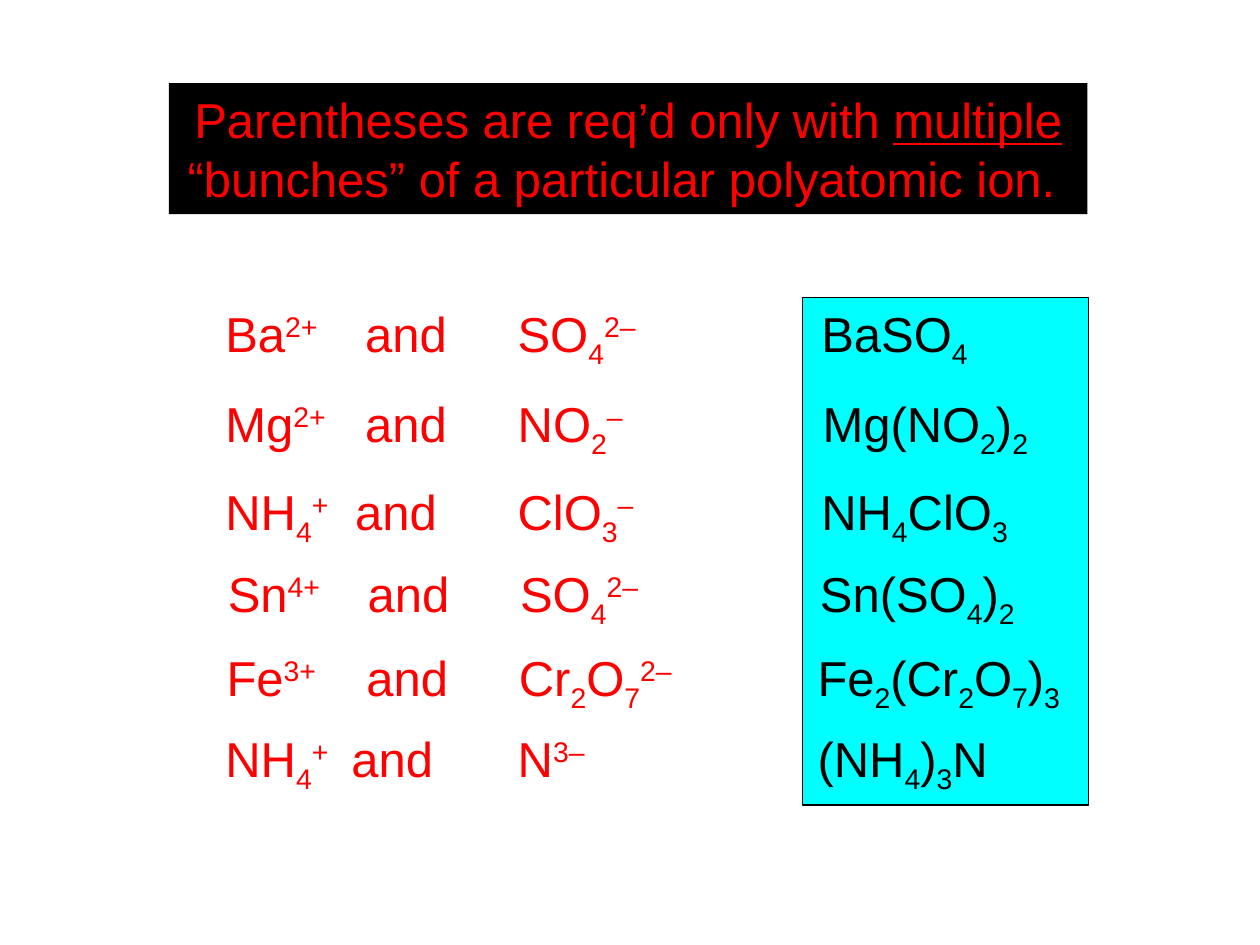
import pptx
import pptx.dml.color
import pptx.enum.shapes
import pptx.enum.text
import pptx.oxml
import pptx.oxml.ns
import pptx.util

RED = pptx.dml.color.RGBColor(0xFF, 0x00, 0x00)
BLACK = pptx.dml.color.RGBColor(0x00, 0x00, 0x00)
CYAN = pptx.dml.color.RGBColor(0x00, 0xFF, 0xFF)

SLIDE_W, SLIDE_H = pptx.util.Inches(10), pptx.util.Inches(7.5)
COL, ROW = SLIDE_W / 100, SLIDE_H / 75
BASELINES = {"_": "-25000", "^": "30000"}
ROW_HEIGHT = 5.7
ANION_TAB = 23.2

TITLE_BOX = (13.4, 6.6, 72.9, 10.4)
PANEL_BOX = (63.7, 23.6, 22.7, 40.3)

# top, (ions left, width), "and" tab, cation, anion, (product left, width), product
ROWS = [
    (23.9, (16.9, 36.4), 11.1, "Ba|^2+", "SO|_4|^2–", (64.2, 14.9), "BaSO|_4"),
    (31.0, (16.9, 35.1), 11.1, "Mg|^2+", "NO|_2|^–", (64.3, 19.9), "Mg(NO|_2|)|_2"),
    (38.0, (16.9, 36.0), 10.3, "NH|_4|^+", "ClO|_3|^–", (64.2, 17.3), "NH|_4|ClO|_3"),
    (44.5, (17.1, 35.3), 11.1, "Sn|^4+", "SO|_4|^2–", (64.1, 19.0), "Sn(SO|_4|)|_2"),
    (51.2, (17.0, 39.4), 11.1, "Fe|^3+", "Cr|_2|O|_7|^2–", (63.9, 23.3),
     "Fe|_2|(Cr|_2|O|_7|)|_3"),
    (57.6, (16.9, 32.1), 10.0, "NH|_4|^+", "N|^3–", (63.9, 17.1), "(NH|_4|)|_3|N"),
]


def emu(box):
    x, y, w, h = box
    return [pptx.util.Emu(round(v)) for v in (x * COL, y * ROW, w * COL, h * ROW)]


def add_run(p, text, color):
    r = p.add_run()
    r.text = text
    r.font.name = "Arial"
    r.font.size = pptx.util.Pt(28)
    r.font.color.rgb = color
    return r


def add_formula(p, formula, color):
    for part in formula.split("|"):
        r = add_run(p, part.lstrip("_^"), color)
        if part[0] in BASELINES:
            r.font._element.set("baseline", BASELINES[part[0]])


def fit_frame(tf):
    tf.word_wrap = False
    tf.auto_size = pptx.enum.text.MSO_AUTO_SIZE.SHAPE_TO_FIT_TEXT
    tf.vertical_anchor = pptx.enum.text.MSO_ANCHOR.MIDDLE


def add_tabs(p, stops):
    tabs = pptx.oxml.parse_xml(f"<a:tabLst {pptx.oxml.ns.nsdecls('a')}/>")
    for stop in stops:
        tab = tabs.makeelement(pptx.oxml.ns.qn("a:tab"),
                               {"pos": str(round(stop * COL)), "algn": "l"})
        tabs.append(tab)
    p._p.get_or_add_pPr().append(tabs)


def add_title(s, box):
    sp = s.shapes.title
    sp.left, sp.top, sp.width, sp.height = emu(box)
    sp.fill.solid()
    sp.fill.fore_color.rgb = BLACK
    tf = sp.text_frame
    fit_frame(tf)
    first, second = tf.paragraphs[0], tf.add_paragraph()
    for p in (first, second):
        p.alignment = pptx.enum.text.PP_ALIGN.CENTER
    add_run(first, "Parentheses are req’d only with ", RED)
    add_run(first, "multiple", RED).font.underline = True
    add_run(second, "“bunches” of a particular polyatomic ion. ", RED)


def add_panel(s, box):
    sp = s.shapes.add_shape(pptx.enum.shapes.MSO_SHAPE.RECTANGLE, *emu(box))
    sp.shadow.inherit = False
    sp.fill.solid()
    sp.fill.fore_color.rgb = CYAN
    sp.line.color.rgb = BLACK
    sp.line.width = pptx.util.Pt(0.75)


def add_line(s, box):
    tf = s.shapes.add_textbox(*emu(box)).text_frame
    fit_frame(tf)
    return tf.paragraphs[0]


def add_ions(s, box, cation, anion, and_tab):
    p = add_line(s, box)
    add_tabs(p, (and_tab, ANION_TAB))
    add_formula(p, cation, RED)
    add_run(p, "\tand\t", RED)
    add_formula(p, anion, RED)


def add_product(s, box, product):
    add_formula(add_line(s, box), product, BLACK)


def main():
    prs = pptx.Presentation()
    prs.slide_width, prs.slide_height = SLIDE_W, SLIDE_H
    s = prs.slides.add_slide(prs.slide_layouts[5])
    add_panel(s, PANEL_BOX)
    add_title(s, TITLE_BOX)
    for top, (ions_x, ions_w), and_tab, cation, anion, (prod_x, prod_w), product in ROWS:
        add_ions(s, (ions_x, top, ions_w, ROW_HEIGHT), cation, anion, and_tab)
        add_product(s, (prod_x, top, prod_w, ROW_HEIGHT), product)
    prs.save("out.pptx")


if __name__ == "__main__":
    main()
